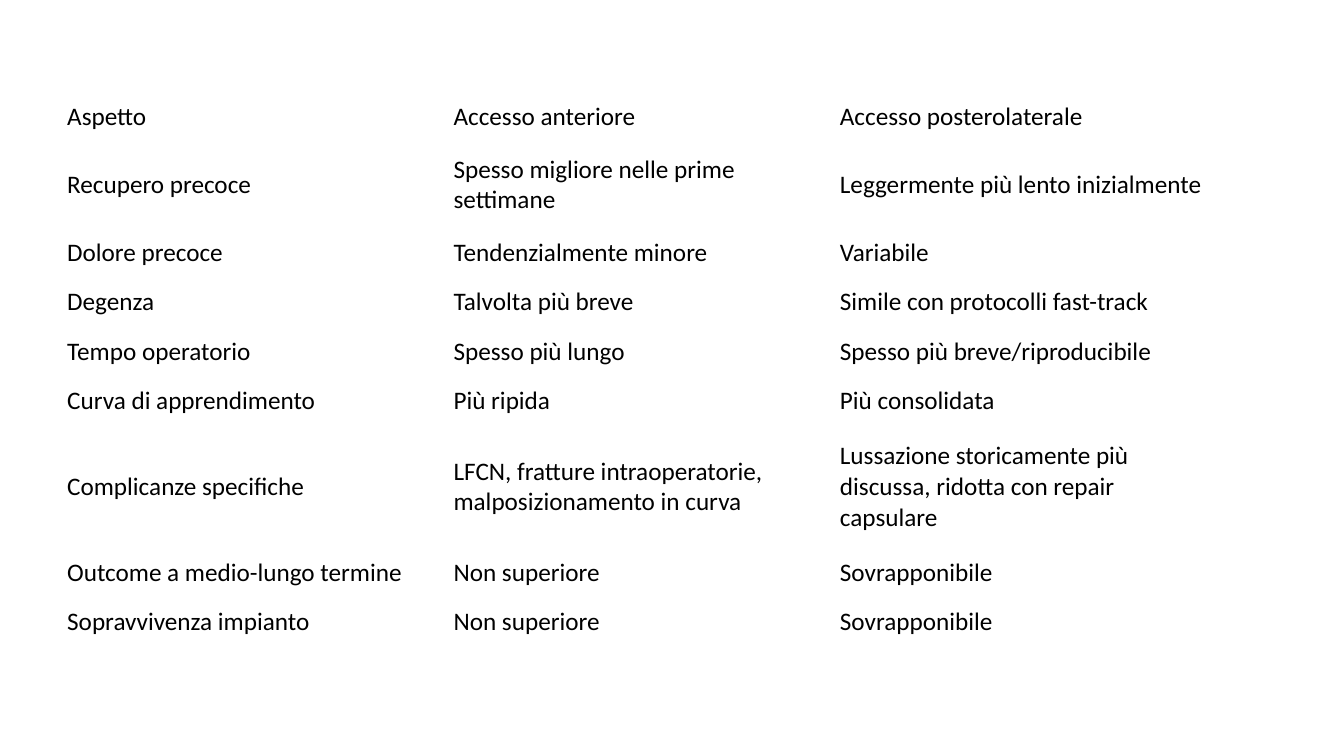
from pptx import Presentation
from pptx.dml.color import RGBColor
from pptx.enum.text import MSO_ANCHOR
from pptx.util import Pt

MIDDLE = MSO_ANCHOR.MIDDLE
COLORS = {"text": "000000"}
FONT = "Calibri"
BLANK_LAYOUT = 6

LINE_HEIGHTS = {1: 35.2, 2: 61.9, 3: 87.9}  # row height by number of text lines

# Each row: lines of text, then aspect, anterior and posterolateral approach
COMPARISON = [
    (1, "Aspetto", "Accesso anteriore", "Accesso posterolaterale"),
    (2, "Recupero precoce", "Spesso migliore nelle prime settimane",
     "Leggermente più lento inizialmente"),
    (1, "Dolore precoce", "Tendenzialmente minore", "Variabile"),
    (1, "Degenza", "Talvolta più breve", "Simile con protocolli fast-track"),
    (1, "Tempo operatorio", "Spesso più lungo", "Spesso più breve/riproducibile"),
    (1, "Curva di apprendimento", "Più ripida", "Più consolidata"),
    (3, "Complicanze specifiche",
     "LFCN, fratture intraoperatorie, malposizionamento in curva",
     "Lussazione storicamente più discussa, ridotta con repair capsulare"),
    (1, "Outcome a medio-lungo termine", "Non superiore", "Sovrapponibile"),
    (1, "Sopravvivenza impianto", "Non superiore", "Sovrapponibile"),
]


def write_text(frame, text, size=18, color="text", bold=False):
    span = frame.paragraphs[0].add_run()
    span.text = text
    span.font.name = FONT
    span.font.size = Pt(size)
    span.font.bold = bold
    span.font.color.rgb = RGBColor.from_string(COLORS[color])


def add_comparison_table(page, left, top, width):
    heights = [LINE_HEIGHTS[lines] for lines, *_ in COMPARISON]
    column_count = len(COMPARISON[0]) - 1
    table = page.shapes.add_table(
        len(COMPARISON), column_count,
        Pt(left), Pt(top), Pt(width), Pt(sum(heights))).table
    table.first_row = False
    table.horz_banding = False

    # Equal columns, rows sized by their text
    for column in table.columns:
        column.width = Pt(width / column_count)
    for row, height, (_, *texts) in zip(table.rows, heights, COMPARISON):
        row.height = Pt(height)
        for cell, text in zip(row.cells, texts):
            cell.fill.background()
            cell.vertical_anchor = MIDDLE
            write_text(cell.text_frame, text)


def main():
    deck = Presentation()
    deck.slide_width, deck.slide_height = Pt(960), Pt(540)
    page = deck.slides.add_slide(deck.slide_layouts[BLANK_LAYOUT])
    add_comparison_table(page, left=40.8, top=66, width=828)
    deck.save("out.pptx")


if __name__ == "__main__":
    main()
